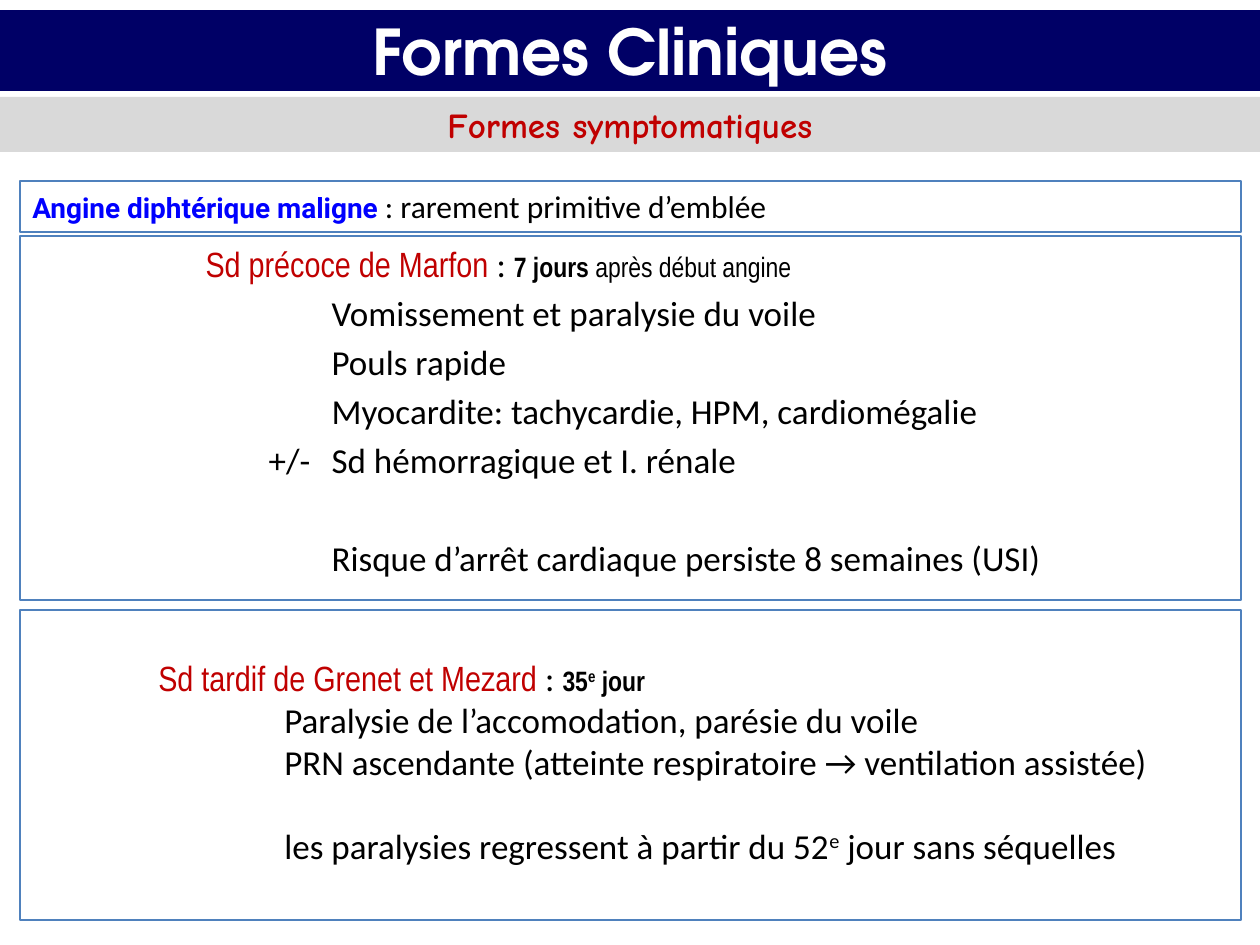
from lxml.etree import SubElement
from pptx import Presentation
from pptx.dml.color import RGBColor
from pptx.enum.text import MSO_ANCHOR, MSO_AUTO_SIZE, PP_ALIGN
from pptx.oxml.ns import qn
from pptx.util import Pt

PX = 914400 / 126  # EMU per px

NAVY = RGBColor(0x00, 0x00, 0x66)
GREY = RGBColor(0xD9, 0xD9, 0xD9)
RED = RGBColor(0xC0, 0x00, 0x00)
BLUE = RGBColor(0x00, 0x00, 0xFF)
BORDER = RGBColor(0x4F, 0x81, 0xBD)
BLACK = RGBColor(0x00, 0x00, 0x00)
WHITE = RGBColor(0xFF, 0xFF, 0xFF)

# Run formats
TITLE = dict(name="TeX Gyre Adventor", size=Pt(36), bold=True, color=WHITE)
SUBTITLE = dict(name="Comic Neue", size=Pt(20), bold=True, color=RED)
TERM = dict(name="Roboto", size=Pt(16), bold=True, color=BLUE)
REMARK = dict(name="Calibri", size=Pt(18), bold=False, color=BLACK)
SYNDROME = dict(name="Arial Narrow", size=Pt(20), bold=False, color=RED)
DETAIL = dict(name="Calibri", size=Pt(20), bold=False, color=BLACK)
DELAY = dict(name="Arial Narrow", size=Pt(16), bold=True, color=BLACK)
DELAY_NOTE = {**DELAY, "bold": False}


def px(n):
    return round(n * PX)


def place(s, box, fill=None, line=None, anchor=MSO_ANCHOR.TOP, top_inset=6):
    """Set the box, fill, border and text frame of a shape."""
    s.left, s.top, s.width, s.height = map(px, box)
    if fill is not None:
        s.fill.solid()
        s.fill.fore_color.rgb = fill
    if line is not None:
        s.line.color.rgb = line
        s.line.width = Pt(0.75)
    tf = s.text_frame
    tf.word_wrap = True
    tf.auto_size = MSO_AUTO_SIZE.NONE
    tf.vertical_anchor = anchor
    tf.margin_top = px(top_inset)
    return tf


def add_runs(p, runs):
    """Add (text, format) runs; a third item marks a superscript."""
    for text, fmt, *superscript in runs:
        r = p.add_run()
        r.text = text
        for key, value in fmt.items():
            if key == "color":
                r.font.color.rgb = value
            else:
                setattr(r.font, key, value)
        if superscript:
            r._r.get_or_add_rPr().set("baseline", "30000")


def write(tf, paragraphs):
    """Write (runs, indent, hanging, space before in pt) paragraphs."""
    for i, (runs, indent, hanging, before) in enumerate(paragraphs):
        p = tf.add_paragraph() if i else tf.paragraphs[0]
        p.space_before = Pt(before)
        pPr = p._p.get_or_add_pPr()
        pPr.set("marL", str(px(indent)))
        pPr.set("indent", str(px(-hanging)))
        SubElement(pPr, qn("a:buNone"))
        add_runs(p, runs)


def heading(s, box, text, fmt, fill):
    tf = place(s, box, fill=fill, anchor=MSO_ANCHOR.MIDDLE)
    p = tf.paragraphs[0]
    p.alignment = PP_ALIGN.CENTER
    add_runs(p, [(text, fmt)])


def definition(s, box):
    write(place(s, box, line=BORDER), [
        ([("Angine diphtérique maligne ", TERM),
          (": rarement primitive d’emblée", REMARK)], 0, 0, 0)])


def early_syndrome(s, box):
    head, detail, hang, gap = 173, 299, 63, 4
    title = [("Sd précoce de Marfon ", SYNDROME), (": ", DETAIL),
             ("7 jours ", DELAY), ("après début angine", DELAY_NOTE)]
    signs = [("Vomissement et paralysie du voile", 0, gap),
             ("Pouls rapide", 0, gap),
             ("Myocardite: tachycardie, HPM, cardiomégalie", 0, gap),
             ("+/-\tSd hémorragique et I. rénale", hang, gap),
             ("Risque d’arrêt cardiaque persiste 8 semaines (USI)", 0, 32)]
    write(place(s, box, line=BORDER), [(title, head, 0, gap)] + [
        ([(text, DETAIL)], detail, hanging, before)
        for text, hanging, before in signs])


def late_syndrome(s, box):
    head, detail = 126, 252
    write(place(s, box, line=BORDER, top_inset=46), [
        ([("Sd tardif de Grenet et Mezard ", SYNDROME), (": ", DETAIL),
          ("35", DELAY), ("e", DELAY, True), (" jour", DELAY)], head, 0, 0),
        ([("Paralysie de l’accomodation, parésie du voile", DETAIL)],
         detail, 0, 0),
        ([("PRN ascendante (atteinte respiratoire → ventilation assistée)",
           DETAIL)], detail, 0, 0),
        ([("les paralysies regressent à partir du 52", DETAIL),
          ("e", DETAIL, True), (" jour sans séquelles", DETAIL)],
         detail, 0, 24)])


def main():
    prs = Presentation()
    prs.slide_width, prs.slide_height = px(1260), px(945)
    slide = prs.slides.add_slide(prs.slide_layouts[1])
    shapes = slide.shapes

    def text_box():
        return shapes.add_textbox(0, 0, 0, 0)

    # Heading bands
    heading(shapes.title, (0, 10, 1260, 81), "Formes Cliniques", TITLE, NAVY)
    heading(text_box(), (0, 97, 1260, 55), "Formes symptomatiques",
            SUBTITLE, GREY)

    # Framed panels
    left, width = 20, 1221
    definition(text_box(), (left, 181, width, 51))
    early_syndrome(slide.placeholders[1], (left, 236, width, 364))
    late_syndrome(text_box(), (left, 610, width, 310))

    prs.save("out.pptx")


if __name__ == "__main__":
    main()
